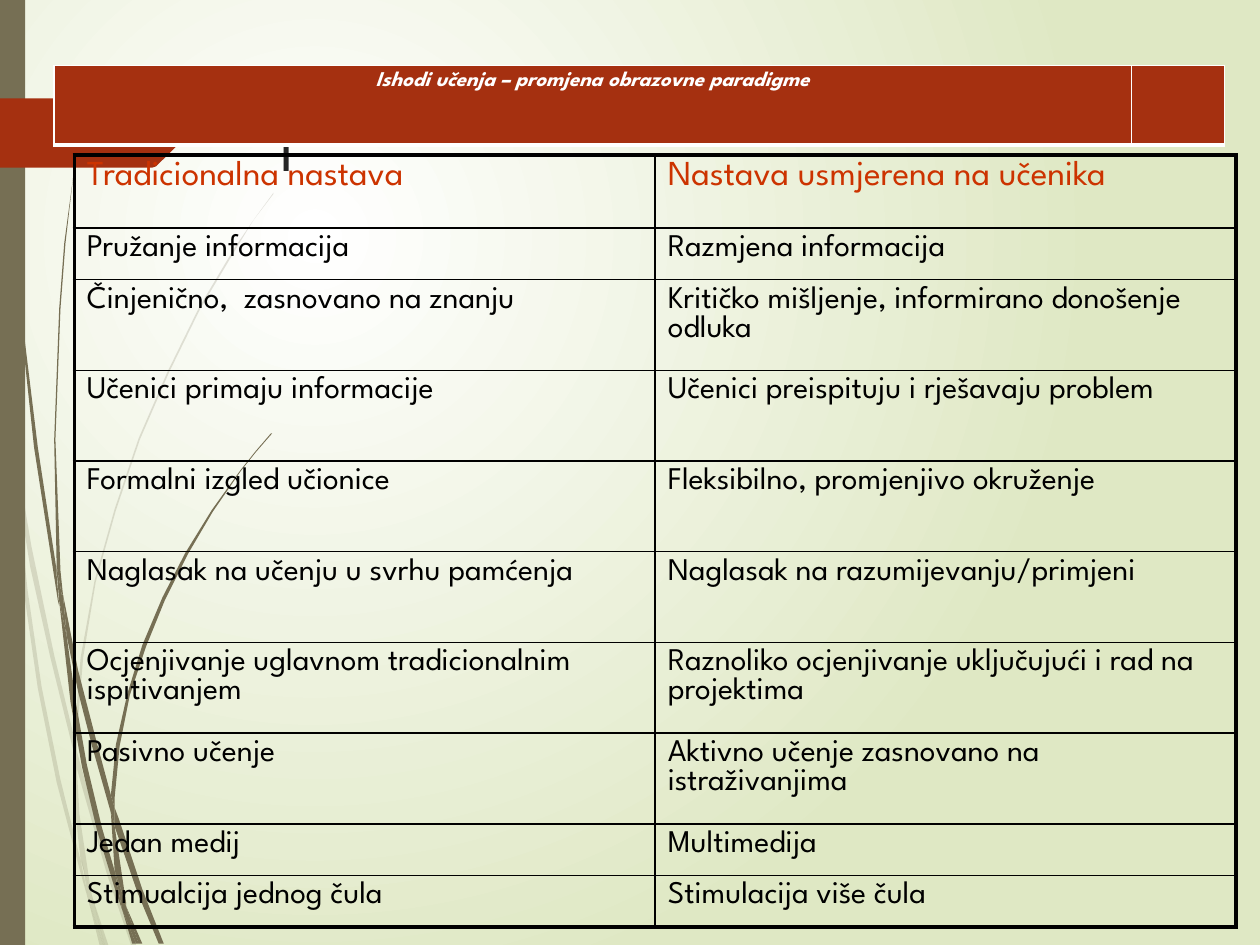
from lxml import etree
from pptx import Presentation
from pptx.dml.color import RGBColor
from pptx.enum.shapes import MSO_SHAPE
from pptx.enum.text import PP_ALIGN
from pptx.oxml import parse_xml
from pptx.oxml.ns import qn
from pptx.util import Inches, Pt

FONT = "League Spartan"
NS = 'xmlns:a="http://schemas.openxmlformats.org/drawingml/2006/main"'


def paint(fill, color, alpha=100):
    """Fill with a hex colour, at an opacity in percent."""
    fill.solid()
    fill.fore_color.rgb = RGBColor.from_string(color)
    if alpha < 100:
        for tone in fill._xPr.iter(qn("a:srgbClr")):
            etree.SubElement(tone, qn("a:alpha"), val=str(alpha * 1000))


def edge(cell, color, widths):
    """Draw the cell borders; widths are points for left, right, top, bottom."""
    props = cell._tc.get_or_add_tcPr()
    for i, (side, width) in enumerate(zip("LRTB", widths)):
        props.insert(i, parse_xml(
            f'<a:ln{side} {NS} w="{Pt(width)}"><a:solidFill>'
            f'<a:srgbClr val="{color}"/></a:solidFill></a:ln{side}>'))


prs = Presentation()
prs.slide_width, prs.slide_height = Inches(10), Inches(7.5)
slide = prs.slides.add_slide(prs.slide_layouts[6])
shapes = slide.shapes

# Background: round glow, centred in the upper left
back = slide.background.fill
back.gradient()
for stop, color in zip(back.gradient_stops, ("FFFFFF", "DFE8C4")):
    stop.color.rgb = RGBColor.from_string(color)
grad = slide.background._cSld.find(".//" + qn("a:gradFill"))
grad.replace(grad.find(qn("a:lin")), parse_xml(
    f'<a:path {NS} path="circle">'
    '<a:fillToRect l="50000" t="50000" r="100000" b="100000"/></a:path>'))

# Outlines in hundredths of an inch
pale = [
    [(8, 350), (6, 322), (0, 282), (0, 299), (7, 344)],
    [(40, 522), (59, 599), (59, 586), (43, 520), (25, 434), (10, 345),
     (12, 376), (24, 450)],
    [(64, 607), (61, 596), (61, 610), (85, 694), (104, 750), (108, 750),
     (88, 692)],
    [(83, 750), (86, 750), (73, 711)],
    [(64, 683), (48, 619), (33, 545), (22, 469), (12, 376), (8, 350),
     (19, 470), (30, 546), (45, 621), (64, 693), (70, 714), (69, 707)],
    [(58, 599), (60, 646), (64, 683), (67, 692), (73, 711), (72, 706),
     (63, 646), (61, 610), (61, 608)],
    [(61, 584), (66, 522), (76, 462), (92, 405), (111, 349), (134, 296),
     (159, 245), (187, 198), (201, 175), (217, 154), (217, 153), (201, 175),
     (186, 197), (158, 244), (133, 295), (110, 348), (91, 404), (75, 461),
     (64, 522), (59, 584), (59, 586), (61, 596)],
    [(70, 714), (79, 750), (82, 750)],
    [(61, 608), (61, 610), (61, 596), (59, 586), (58, 599)],
    [(67, 692), (65, 683), (69, 707), (70, 714), (82, 750), (83, 750),
     (73, 711)],
]
dark = [
    [(5, 110), (14, 233), (27, 355), (46, 477), (47, 481), (45, 457),
     (45, 453), (30, 355), (15, 232), (6, 109), (4, 48), (3, 0), (2, 0),
     (3, 48)],
    [(73, 592), (88, 645), (88, 633), (88, 631), (77, 590), (62, 532),
     (50, 472), (53, 505), (62, 549)],
    [(94, 649), (91, 641), (91, 656), (109, 708), (126, 749), (130, 749),
     (113, 706)],
    [(91, 691), (81, 657), (69, 607), (60, 556), (53, 505), (47, 477),
     (56, 557), (65, 608), (77, 659), (92, 708), (97, 722), (96, 717)],
    [(50, 472), (48, 453), (44, 349), (48, 245), (52, 193), (58, 141),
     (51, 193), (47, 245), (43, 349), (45, 449), (49, 472)],
    [(110, 749), (113, 749), (100, 719)],
    [(47, 477), (53, 505), (50, 472), (49, 472), (45, 449), (45, 453)],
    [(91, 633), (95, 592), (103, 552), (116, 513), (131, 476), (149, 440),
     (169, 406), (191, 374), (203, 359), (216, 344), (215, 344), (203, 358),
     (191, 373), (168, 405), (147, 439), (129, 474), (113, 512), (101, 551),
     (92, 591), (88, 631), (91, 641)],
    [(97, 722), (105, 749), (108, 749)],
    [(88, 645), (91, 691), (96, 706), (100, 719), (100, 716), (91, 656),
     (90, 651)],
    [(88, 645), (90, 651), (91, 656), (91, 641), (88, 631), (88, 633)],
    [(96, 706), (91, 691), (96, 717), (97, 722), (108, 749), (110, 749),
     (100, 719)],
]
tag = [(149, 107), (124, 132), (121, 133), (0, 133), (0, 78), (121, 78),
       (124, 79), (149, 104)]

bar = shapes.add_shape(MSO_SHAPE.RECTANGLE, 0, 0, Inches(0.2), Inches(7.5))
paint(bar.fill, "766F54")
bar.line.fill.background()
bar.shadow.inherit = False

jobs = [(line, "766F54", 20) for line in pale]
jobs += [(line, "766F54", 100) for line in dark] + [(tag, "A53010", 100)]
for line, color, alpha in jobs:
    pen = shapes.build_freeform(*line[0], scale=Inches(0.01))
    pen.add_line_segments(line[1:], close=True)
    form = pen.convert_to_shape()
    paint(form.fill, color, alpha)
    form.line.fill.background()
    form.shadow.inherit = False

title = shapes.add_textbox(Inches(2.13), Inches(0.68), Inches(7.21), Inches(1.4))
frame = title.text_frame
frame.word_wrap = True
frame.margin_top = Inches(0.18)
frame.text = "l"
font = frame.paragraphs[0].font
font.name, font.size = FONT, Pt(36)
font.color.rgb = RGBColor.from_string("262626")

# Heading band
band = shapes.add_table(1, 2, Inches(0.43), Inches(0.52), Inches(9.29),
                        Inches(0.63)).table
band.first_row = band.horz_banding = False
for col, width in zip(band.columns, (8.55, 0.74)):
    col.width = Inches(width)
for cell in band.iter_cells():
    paint(cell.fill, "A53010")
    edge(cell, "FFFFFF", (1, 1, 1, 3))
head = band.cell(0, 0)
head.margin_left = head.margin_right = Inches(0.07)
head.text = "Ishodi učenja – promjena obrazovne paradigme"
para = head.text_frame.paragraphs[0]
para.alignment = PP_ALIGN.CENTER
font = para.font
font.name, font.size, font.bold, font.italic = FONT, Pt(12), True, True
font.color.rgb = RGBColor.from_string("FFFFFF")

# Comparison of the two ways of teaching
rows = [
    (0.58, "Tradicionalna nastava", "Nastava usmjerena na učenika"),
    (0.41, "Pružanje informacija", "Razmjena informacija"),
    (0.72, "Činjenično,  zasnovano na znanju",
     "Kritičko mišljenje, informirano donošenje odluka"),
    (0.72, "Učenici primaju informacije",
     "Učenici preispituju i rješavaju problem"),
    (0.72, "Formalni izgled učionice", "Fleksibilno, promjenjivo okruženje"),
    (0.72, "Naglasak na učenju u svrhu pamćenja",
     "Naglasak na razumijevanju/primjeni"),
    (0.72, "Ocjenjivanje uglavnom tradicionalnim ispitivanjem",
     "Raznoliko ocjenjivanje uključujući i rad na projektima"),
    (0.72, "Pasivno učenje", "Aktivno učenje zasnovano na istraživanjima"),
    (0.41, "Jedan medij", "Multimedija"),
    (0.41, "Stimualcija jednog čula", "Stimulacija više čula"),
]
last = len(rows) - 1
grid = shapes.add_table(len(rows), 2, Inches(0.59), Inches(1.23),
                        Inches(9.21), Inches(6.15)).table
grid.first_row = grid.horz_banding = False
for col in grid.columns:
    col.width = Inches(4.61)
for r, (height, *texts) in enumerate(rows):
    grid.rows[r].height = Inches(height)
    size, color = (20, "CC3300") if r == 0 else (18, "000000")
    for c, text in enumerate(texts):
        cell = grid.cell(r, c)
        cell.fill.background()
        outer = (c == 0, c == 1, r == 0, r == last)
        edge(cell, "000000", [2.25 if out else 1 for out in outer])
        cell.text = text
        para = cell.text_frame.paragraphs[0]
        para.space_before = Pt(size * 0.2)
        para.font.name, para.font.size = FONT, Pt(size)
        para.font.color.rgb = RGBColor.from_string(color)

prs.save("out.pptx")
